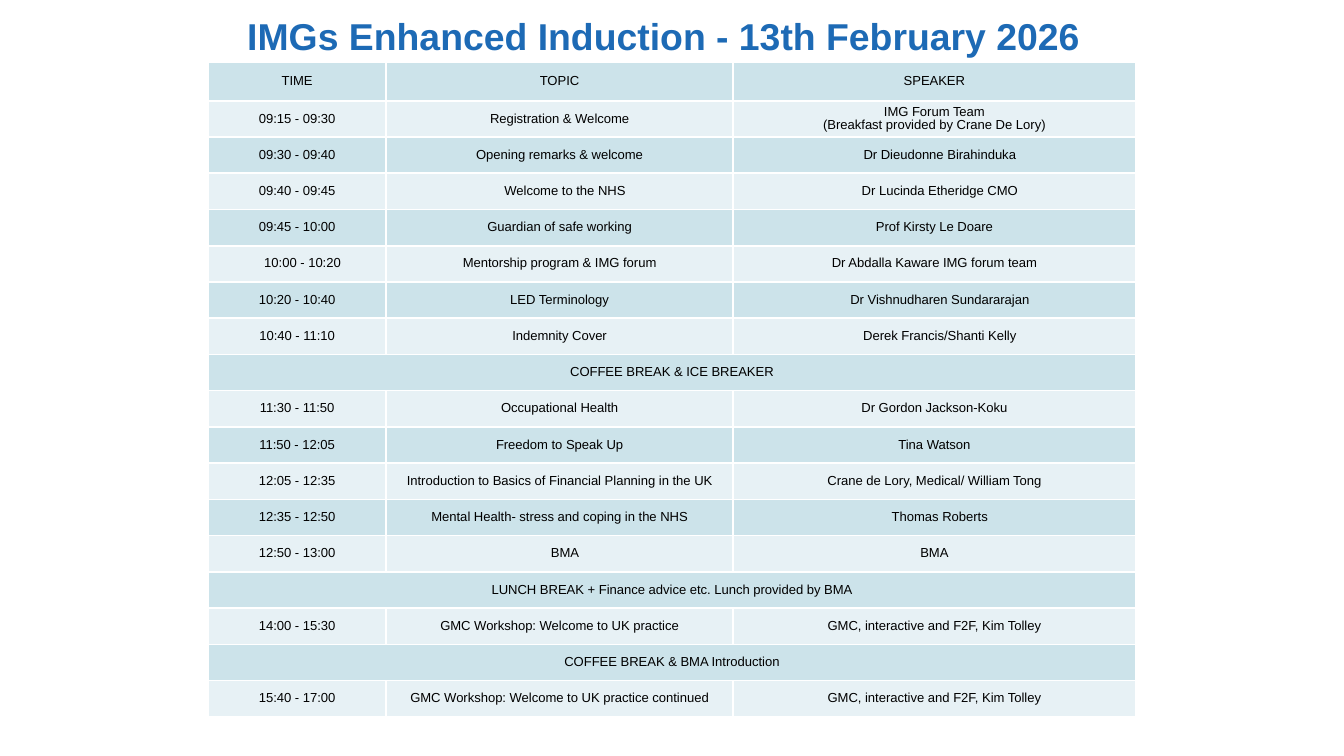
from lxml.etree import SubElement
from pptx import Presentation
from pptx.dml.color import RGBColor
from pptx.enum.text import MSO_ANCHOR, MSO_AUTO_SIZE, PP_ALIGN
from pptx.oxml.ns import qn
from pptx.util import Inches, Pt

FONT = "Arial"
TITLE_BLUE = RGBColor(0x1D, 0x6A, 0xB5)
BLACK = RGBColor(0, 0, 0)
WHITE = RGBColor(0xFF, 0xFF, 0xFF)
BAND_DARK = RGBColor(0xCC, 0xE3, 0xEA)
BAND_LIGHT = RGBColor(0xE7, 0xF1, 0xF5)

COLUMN_WIDTHS = [1.32, 2.58, 2.99]
HEADER_HEIGHT = 0.29
NUDGE = 0.08

# A row with a single entry spans the whole table.
AGENDA = [
    ("TIME", "TOPIC", "SPEAKER"),
    ("09:15 - 09:30", "Registration & Welcome",
     "IMG Forum Team\n(Breakfast provided by Crane De Lory)"),
    ("09:30 - 09:40", "Opening remarks & welcome", "Dr Dieudonne Birahinduka"),
    ("09:40 - 09:45", "Welcome to the NHS", "Dr Lucinda Etheridge CMO"),
    ("09:45 - 10:00", "Guardian of safe working", "Prof Kirsty Le Doare"),
    ("10:00 - 10:20", "Mentorship program & IMG forum", "Dr Abdalla Kaware IMG forum team"),
    ("10:20 - 10:40", "LED Terminology", "Dr Vishnudharen Sundararajan"),
    ("10:40 - 11:10", "Indemnity Cover", "Derek Francis/Shanti Kelly"),
    ("COFFEE BREAK & ICE BREAKER",),
    ("11:30 - 11:50", "Occupational Health", "Dr Gordon Jackson-Koku"),
    ("11:50 - 12:05", "Freedom to Speak Up", "Tina Watson"),
    ("12:05 - 12:35", "Introduction to Basics of Financial Planning in the UK",
     "Crane de Lory, Medical/ William Tong"),
    ("12:35 - 12:50", "Mental Health- stress and coping in the NHS", "Thomas Roberts"),
    ("12:50 - 13:00", "BMA", "BMA"),
    ("LUNCH BREAK + Finance advice etc. Lunch provided by BMA",),
    ("14:00 - 15:30", "GMC Workshop: Welcome to UK practice",
     "GMC, interactive and F2F, Kim Tolley"),
    ("COFFEE BREAK & BMA Introduction",),
    ("15:40 - 17:00", "GMC Workshop: Welcome to UK practice continued",
     "GMC, interactive and F2F, Kim Tolley"),
]
# (row, column) of the cells set slightly right of centre
NUDGED = {(2, 2), (3, 1), (3, 2), (5, 0), (6, 2), (7, 2), (12, 2), (13, 1)}


def style_font(font, size, color, bold=False):
    font.name = FONT
    font.size = Pt(size)
    font.bold = bold
    font.color.rgb = color


def add_title(s, text, left, top, width, height):
    sp = s.shapes.title
    sp.left, sp.top, sp.width, sp.height = map(Inches, (left, top, width, height))
    tf = sp.text_frame
    tf.text = text
    tf.word_wrap = True
    tf.auto_size = MSO_AUTO_SIZE.NONE
    tf.vertical_anchor = MSO_ANCHOR.TOP
    tf.margin_top = tf.margin_bottom = Inches(0.05)
    p = tf.paragraphs[0]
    p.alignment = PP_ALIGN.CENTER
    p.line_spacing = 1.15
    style_font(p.runs[0].font, 20, TITLE_BLUE, bold=True)


def set_borders(cell, color, width):
    tcPr = cell._tc.get_or_add_tcPr()
    for i, side in enumerate(("lnL", "lnR", "lnT", "lnB")):
        ln = tcPr.makeelement(qn(f"a:{side}"), {"w": str(Pt(width))})
        fill = SubElement(ln, qn("a:solidFill"))
        SubElement(fill, qn("a:srgbClr"), val=str(color))
        tcPr.insert(i, ln)


def fill_cell(cell, text, nudge=0):
    cell.vertical_anchor = MSO_ANCHOR.MIDDLE
    cell.margin_left = cell.margin_right = Inches(0.05)
    cell.margin_top = cell.margin_bottom = 0
    cell.text_frame.text = text
    for p in cell.text_frame.paragraphs:
        p.alignment = PP_ALIGN.CENTER
        p.line_spacing = 0.95
        if nudge:
            p._p.get_or_add_pPr().set("marL", str(Inches(nudge)))
        for r in p.runs:
            style_font(r.font, 7, BLACK)


def add_agenda(s, left, top, width, height):
    n_rows, n_cols = len(AGENDA), len(COLUMN_WIDTHS)
    table = s.shapes.add_table(n_rows, n_cols, *map(Inches, (left, top, width, height))).table
    table.first_row = table.horz_banding = False
    for column, share in zip(table.columns, COLUMN_WIDTHS):
        column.width = Inches(width * share / sum(COLUMN_WIDTHS))
    row_height = (height - HEADER_HEIGHT) / (n_rows - 1)
    for i, entries in enumerate(AGENDA):
        table.rows[i].height = Inches(row_height if i else HEADER_HEIGHT)
        for cell in table.rows[i].cells:
            cell.fill.solid()
            cell.fill.fore_color.rgb = BAND_LIGHT if i % 2 else BAND_DARK
            set_borders(cell, WHITE, 1)
        if len(entries) == 1:
            table.cell(i, 0).merge(table.cell(i, n_cols - 1))
        for j, text in enumerate(entries):
            fill_cell(table.cell(i, j), text, NUDGE if (i, j) in NUDGED else 0)


def main():
    prs = Presentation()
    prs.slide_width = Inches(10)
    prs.slide_height = prs.slide_width * 9 // 16
    s = prs.slides.add_slide(prs.slide_layouts[5])
    add_title(s, "IMGs Enhanced Induction - 13th February 2026", 0.53, 0, 8.82, 0.46)
    add_agenda(s, 1.55, 0.46, 6.9, 4.88)
    prs.save("out.pptx")


if __name__ == "__main__":
    main()
